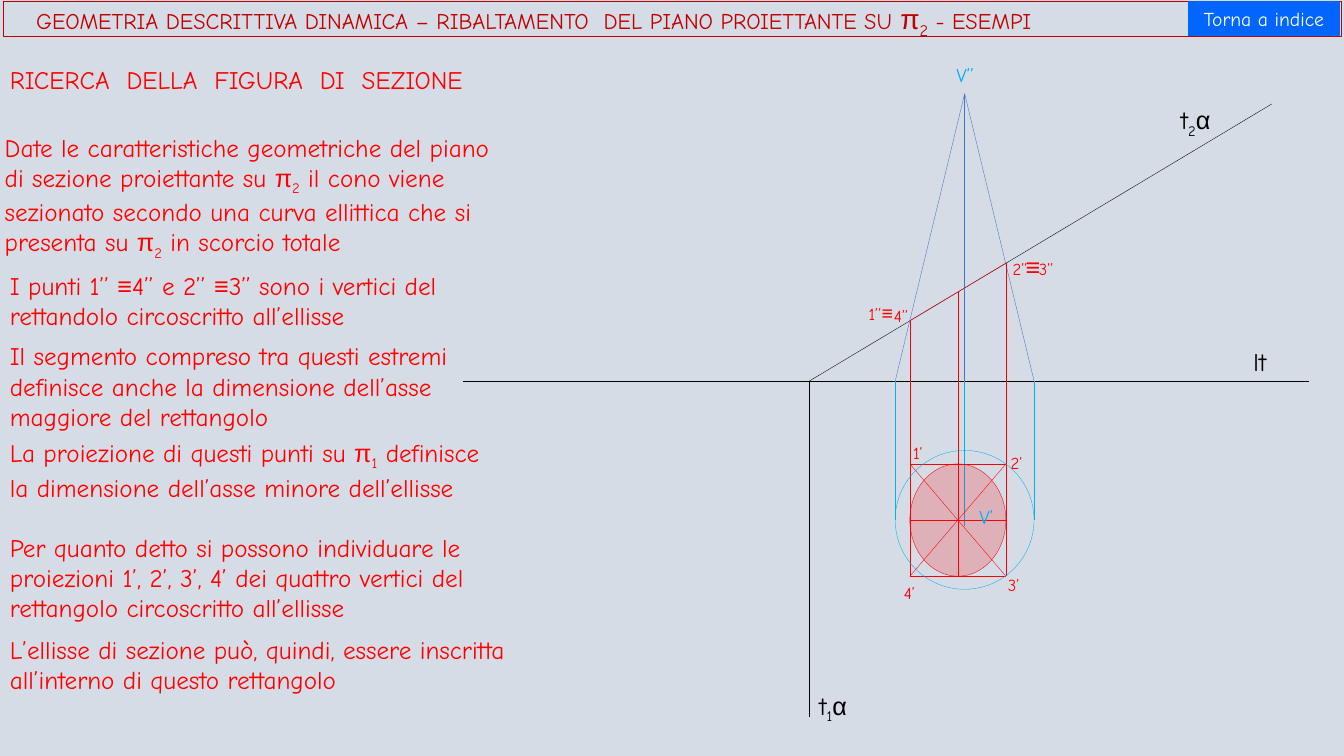
"""Build a descriptive geometry slide: a cone cut by a projecting plane."""
from dataclasses import dataclass

from lxml import etree
from pptx import Presentation
from pptx.dml.color import RGBColor
from pptx.enum import shapes, text
from pptx.oxml import ns
from pptx.util import Cm, Pt


@dataclass(frozen=True)
class Theme:
    background: str = "D6DCE5"
    black: str = "000000"
    red: str = "FF0000"
    dark_red: str = "C00000"
    blue: str = "4472C4"
    cyan: str = "00B0F0"
    button: str = "0066FF"
    white: str = "FFFFFF"
    font: str = "Comic Neue"
    symbol_font: str = "Arial"
    body: int = 18
    header: int = 16
    header_symbol: int = 20
    vertex: int = 14
    point: int = 12
    hairline: float = 0.25


theme = Theme()
color = RGBColor.from_string


def write(shape, content, size, ink, symbol_size=None):
    """Fill a shape; bars part the runs, an underscore marks a subscript."""
    frame = shape.text_frame
    frame.word_wrap = True
    paragraph = frame.paragraphs[0]
    paragraph.font.name = theme.font
    paragraph.font.size = Pt(size)
    paragraph.font.color.rgb = color(ink)
    for piece in content.split("|"):
        run = paragraph.add_run()
        run.text = piece.lstrip("_")
        if piece in ("π", "α", "≡"):
            run.font.name = theme.symbol_font
        if piece.startswith("_"):
            run.font._element.set("baseline", "-25000")
        if symbol_size and (piece == "π" or piece.startswith("_")):
            run.font.size = Pt(symbol_size)
    return paragraph


def draw_line(start, end, ink):
    """Draw a hairline between two points in centimetres."""
    line = slide.shapes.add_connector(
        shapes.MSO_CONNECTOR.STRAIGHT, *(Cm(value) for value in start + end))
    line.line.color.rgb = color(ink)
    line.line.width = Pt(theme.hairline)
    etree.SubElement(line._element.spPr, ns.qn("a:effectLst"))


presentation = Presentation()
presentation.slide_width, presentation.slide_height = Cm(33.87), Cm(19.05)
slide = presentation.slides.add_slide(presentation.slide_layouts[6])
slide.background.fill.solid()
slide.background.fill.fore_color.rgb = color(theme.background)

ground = 9.6
origin = (20.4, ground)
axis, radius, apex, base = 24.31, 1.75, 2.36, 13.1
left, right, top, bottom = 22.93, 25.35, 11.69, 14.52
middle = (left + right) / 2
cut_left, cut_right = 8.08, 6.63
cut_middle = (cut_left + cut_right) / 2
cross = 0.15

lines = [
    ((11.68, ground), (32.99, ground), theme.black),
    (origin, (20.4, 18.06), theme.black),
    (origin, (32.05, 2.62), theme.black),
    ((axis - cross, base), (axis + cross, base), theme.cyan),
    ((axis, base - cross), (axis, base + cross), theme.cyan),
]
for foot in (axis, axis - radius, axis + radius):
    lines.append(((foot, ground), (axis, apex), theme.blue))
    lines.append(((foot, ground), (foot, base), theme.cyan))
lines += [(start, end, theme.red) for start, end in (
    ((left, cut_left), (left, bottom)),
    ((right, cut_right), (right, bottom)),
    ((middle, cut_middle), (middle, bottom)),
    ((left, cut_left), (right, cut_right)),
    ((left, base), (right, base)),
    ((left, top), (right, top)),
    ((left, bottom), (right, bottom)),
    ((left, top), (right, bottom)),
    ((left, bottom), (right, top)),
)]
for start, end, ink in lines:
    draw_line(start, end, ink)

for x, y, width, height, ink, filled in (
    (axis - radius, base - radius, 2 * radius, 2 * radius, theme.cyan, False),
    (left, top, right - left, bottom - top, theme.red, True),
):
    ellipse = slide.shapes.add_shape(
        shapes.MSO_SHAPE.OVAL, Cm(x), Cm(y), Cm(width), Cm(height))
    ellipse.shadow.inherit = False
    ellipse.line.color.rgb = color(ink)
    ellipse.line.width = Pt(theme.hairline)
    if filled:
        ellipse.fill.solid()
        ellipse.fill.fore_color.rgb = color(ink)
        tint = ellipse._element.spPr.find(".//" + ns.qn("a:srgbClr"))
        etree.SubElement(tint, ns.qn("a:alpha"), val="20000")
    else:
        ellipse.fill.background()

for x, y, content, size, ink in (
    (31.34, 8.59, "lt", theme.body, theme.black),
    (20.4, 17.27, "t|_1|α", theme.body, theme.black),
    (29.51, 2.51, "t|_2|α", theme.body, theme.black),
    (23.85, 1.47, "V’’", theme.vertex, theme.cyan),
    (24.43, 12.6, "V’", theme.vertex, theme.cyan),
    (21.64, 7.54, "1’’", theme.point, theme.red),
    (21.97, 7.47, "≡", theme.vertex, theme.red),
    (22.28, 7.57, "4’’", theme.point, theme.red),
    (25.27, 6.4, "2’’", theme.point, theme.red),
    (25.6, 6.22, "≡", theme.body, theme.red),
    (25.93, 6.4, "3’’", theme.point, theme.red),
    (22.76, 11.02, "1’", theme.point, theme.red),
    (25.22, 11.28, "2’", theme.point, theme.red),
    (25.15, 14.35, "3’", theme.point, theme.red),
    (22.53, 14.55, "4’", theme.point, theme.red),
):
    label = slide.shapes.add_textbox(Cm(x), Cm(y), Cm(2), Cm(1))
    write(label, content, size, ink)

for x, y, width, height, content in (
    (0, 1.5, 16.81, 1.02, "RICERCA  DELLA  FIGURA  DI  SEZIONE"),
    (-0.13, 3.2, 13.28, 3.33,
     "Date le caratteristiche geometriche del piano di sezione proiettante su "
     "|π|_2| il cono viene sezionato secondo una curva ellittica che si "
     "presenta su |π|_2| in scorcio totale"),
    (0, 6.68, 11.66, 1.8,
     "I punti 1’’ |≡|4’’ e 2’’ |≡|3’’ sono i vertici del rettandolo "
     "circoscritto all’ellisse"),
    (0, 8.46, 12.07, 2.57,
     "Il segmento compreso tra questi estremi definisce anche la dimensione "
     "dell’asse maggiore del rettangolo"),
    (0, 10.9, 12.62, 2.57,
     "La proiezione di questi punti su |π|_1| definisce la dimensione "
     "dell’asse minore dell’ellisse"),
    (0, 13.28, 13.18, 2.57,
     "Per quanto detto si possono individuare le proiezioni 1’, 2’, 3’, 4’ "
     "dei quattro vertici del rettangolo circoscritto all’ellisse"),
    (0, 15.85, 14.2, 1.8,
     "L’ellisse di sezione può, quindi, essere inscritta all’interno di "
     "questo rettangolo"),
):
    passage = slide.shapes.add_textbox(Cm(x), Cm(y), Cm(width), Cm(height))
    write(passage, content, theme.body, theme.red)

header = slide.shapes.add_textbox(Cm(0.08), Cm(0.03), Cm(33.73), Cm(0.89))
header.line.color.rgb = color(theme.dark_red)
header.line.width = Pt(theme.hairline)
header.text_frame.margin_left = Cm(0.83)
header.text_frame.vertical_anchor = text.MSO_ANCHOR.MIDDLE
heading = write(
    header,
    "GEOMETRIA DESCRITTIVA DINAMICA – RIBALTAMENTO  DEL PIANO PROIETTANTE SU "
    "|π|_2| - ESEMPI",
    theme.header, theme.dark_red, theme.header_symbol)
heading.line_spacing = 0.9

button = slide.shapes.add_shape(
    shapes.MSO_SHAPE.ACTION_BUTTON_CUSTOM, Cm(29.95), Cm(0.03), Cm(3.81), Cm(0.89))
button.shadow.inherit = False
button.fill.solid()
button.fill.fore_color.rgb = color(theme.button)
button.line.fill.background()
button.text_frame.vertical_anchor = text.MSO_ANCHOR.MIDDLE
caption = write(button, "Torna a indice", theme.vertex, theme.white)
caption.alignment = text.PP_ALIGN.CENTER

presentation.save("out.pptx")
